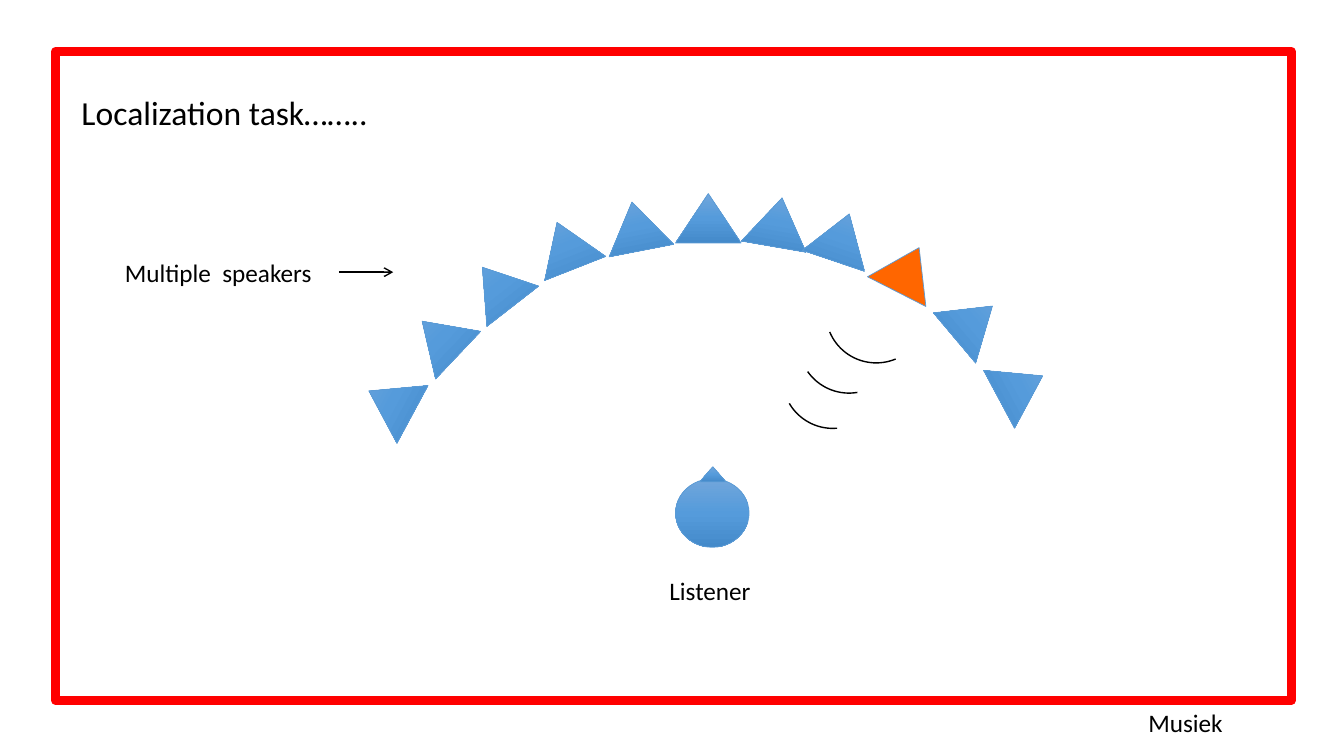
import copy

import lxml.etree
import pptx
import pptx.dml.color
import pptx.enum.shapes
import pptx.enum.text
import pptx.oxml.ns
import pptx.util

Inches = pptx.util.Inches
Pt = pptx.util.Pt
qn = pptx.oxml.ns.qn
SHAPES = pptx.enum.shapes.MSO_SHAPE

COLORS = {
    "ink": "000000",
    "frame": "FF0000",
    "active": "FF6600",
    "outline": "5B9BD5",
    "light": "71A6DB",
    "middle": "559BDB",
    "dark": "448ACA",
}


class Diagram:
    """Draws the elements of the localization diagram on one slide in a shared style."""

    def __init__(self, slide, font="Calibri"):
        self.slide = slide
        self.font = font

    def color(self, name):
        return pptx.dml.color.RGBColor.from_string(COLORS[name])

    def label(self, text, left, top, width, height=0.4, size=18):
        box = self.slide.shapes.add_textbox(*map(Inches, (left, top, width, height)))
        box.text_frame.word_wrap = False
        box.text_frame.auto_size = pptx.enum.text.MSO_AUTO_SIZE.SHAPE_TO_FIT_TEXT
        paragraph = box.text_frame.paragraphs[0]
        paragraph.text = text
        paragraph.font.name = self.font
        paragraph.font.size = Pt(size)
        paragraph.font.color.rgb = self.color("ink")

    def outlined(self, kind, left, top, width, height, line, weight, rotation=0):
        shape = self.slide.shapes.add_shape(kind, *map(Inches, (left, top, width, height)))
        shape.rotation = rotation
        shape.shadow.inherit = False
        shape.fill.background()
        shape.line.color.rgb = self.color(line)
        shape.line.width = Pt(weight)
        return shape

    def solid(self, kind, left, top, width, height, rotation=0, fill=None):
        shape = self.outlined(kind, left, top, width, height, "outline", 0.5, rotation)
        if fill:
            shape.fill.solid()
            shape.fill.fore_color.rgb = self.color(fill)
        else:
            self.shade(shape)

    def shade(self, shape):
        shape.fill.gradient()
        shape.fill.gradient_angle = 270
        stop_list = shape.element.spPr.find(qn("a:gradFill")).find(qn("a:gsLst"))
        stop_list.insert(1, copy.deepcopy(stop_list[0]))
        for stop, name, position in zip(
            shape.fill.gradient_stops, ("light", "middle", "dark"), (0, 0.5, 1)
        ):
            stop.color.rgb = self.color(name)
            stop.position = position

    def wave(self, left, top, rotation, end_angle):
        arc = self.outlined(SHAPES.ARC, left, top, 1, 1, "ink", 1, rotation)
        arc.adjustments[0] = 162
        arc.adjustments[1] = end_angle

    def arrow(self, start, end):
        connector = self.slide.shapes.add_connector(
            pptx.enum.shapes.MSO_CONNECTOR.STRAIGHT, *map(Inches, start + end)
        )
        connector.line.color.rgb = self.color("ink")
        connector.line.width = Pt(1)
        line = connector.line._get_or_add_ln()
        lxml.etree.SubElement(line, qn("a:tailEnd"), type="arrow")
        lxml.etree.SubElement(connector.element.spPr, qn("a:effectLst"))


def main():
    presentation = pptx.Presentation()
    presentation.slide_width = Inches(13.33)
    presentation.slide_height = Inches(7.5)
    diagram = Diagram(presentation.slides.add_slide(presentation.slide_layouts[6]))

    diagram.label("Localization task……..", 0.71, 0.86, 3.08, 0.5, size=24)

    speakers = [
        (3.55, 3.75, 298.3),
        (4.04, 3.11, 313.4),
        (4.61, 2.6, 322.1),
        (5.29, 2.19, 338.5),
        (5.99, 2, 349),
        (6.7, 1.92, 0),
        (7.39, 1.96, 9.8),
        (8.02, 2.11, 18.7),
        (8.68, 2.43, 27),
        (9.33, 2.95, 49.9),
        (9.8, 3.6, 61.8),
    ]
    active_speaker = 8
    for number, (left, top, rotation) in enumerate(speakers):
        fill = "active" if number == active_speaker else None
        diagram.solid(SHAPES.ISOSCELES_TRIANGLE, left, top, 0.65, 0.49, rotation, fill)

    diagram.solid(SHAPES.OVAL, 6.7, 4.75, 0.73, 0.68)
    diagram.solid(SHAPES.ISOSCELES_TRIANGLE, 6.94, 4.63, 0.26, 0.15)

    short_wave, full_wave = 200.77, 0
    diagram.wave(7.92, 2.9, 170.4, short_wave)
    diagram.wave(8.19, 2.6, 157.3, full_wave)
    diagram.wave(7.76, 3.25, 175.1, short_wave)

    diagram.label("Multiple  speakers", 1.14, 2.5, 2.08)
    diagram.arrow((3.36, 2.7), (3.9, 2.7))
    diagram.label("Listener", 6.54, 5.66, 1.02)
    diagram.label("Musiek", 11.29, 6.97, 0.95)
    diagram.outlined(SHAPES.RECTANGLE, 0.55, 0.51, 12.26, 6.44, "frame", 6)

    presentation.save("out.pptx")


if __name__ == "__main__":
    main()
